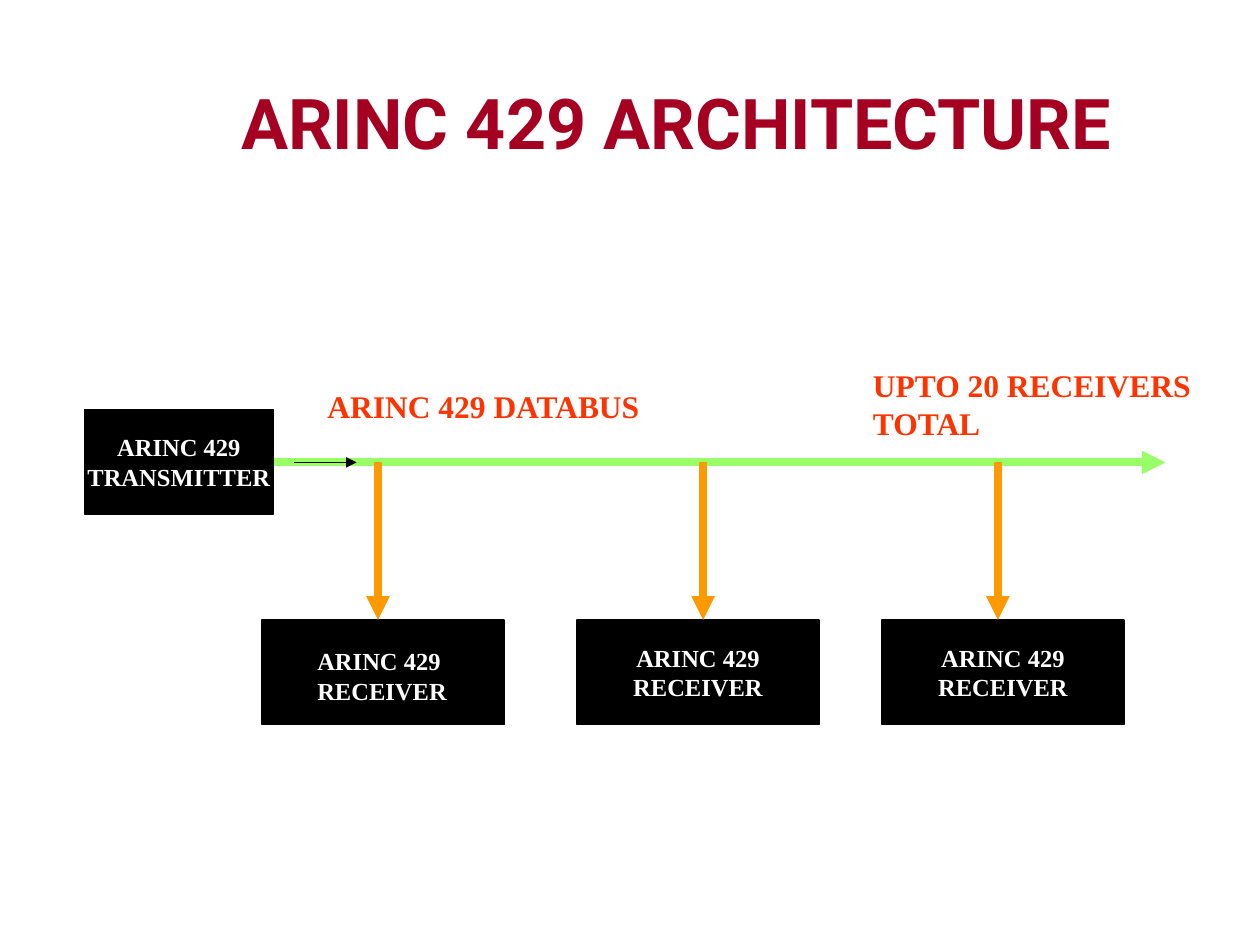
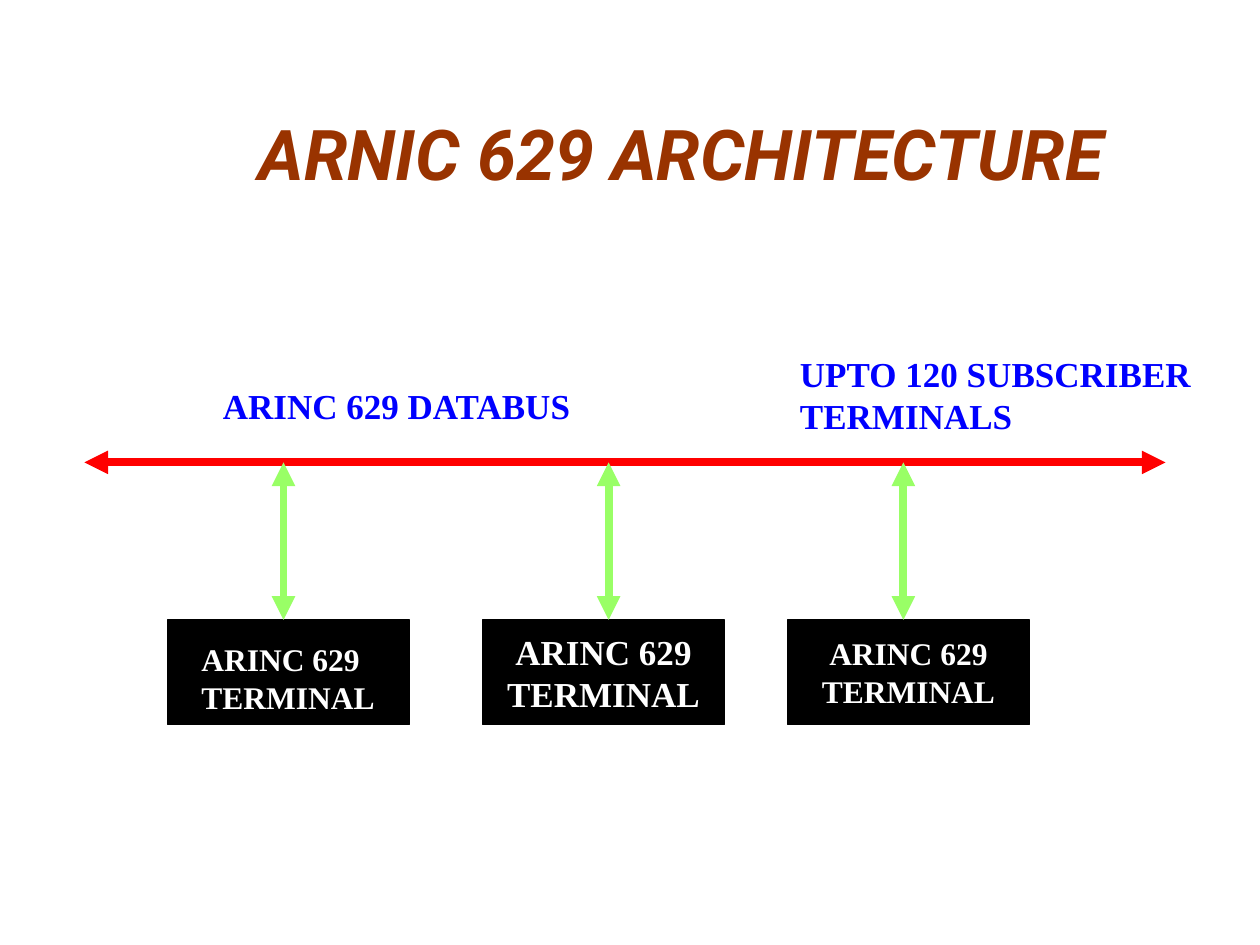
from lxml import etree
from pptx import Presentation
from pptx.dml.color import RGBColor
from pptx.enum.shapes import MSO_CONNECTOR, MSO_SHAPE
from pptx.enum.text import MSO_ANCHOR, PP_ALIGN
from pptx.oxml.ns import qn
from pptx.util import Inches, Pt

RECT = MSO_SHAPE.RECTANGLE
STRAIGHT = MSO_CONNECTOR.STRAIGHT
LEFT, CENTER = PP_ALIGN.LEFT, PP_ALIGN.CENTER
TOP, MIDDLE = MSO_ANCHOR.TOP, MSO_ANCHOR.MIDDLE

BLACK = RGBColor(0x00, 0x00, 0x00)
WHITE = RGBColor(0xFF, 0xFF, 0xFF)
CRIMSON = RGBColor(0xA5, 0x00, 0x21)
BROWN = RGBColor(0x99, 0x33, 0x00)
GREEN = RGBColor(0x99, 0xFF, 0x66)
ORANGE = RGBColor(0xFF, 0x99, 0x00)
RED = RGBColor(0xFF, 0x00, 0x00)
VERMILION = RGBColor(0xFF, 0x33, 0x00)
BLUE = RGBColor(0x00, 0x00, 0xFF)

TITLE_FONT, BODY_FONT = "Roboto", "Times New Roman"
BUS_Y, BUS_END = 3.67, 9.25
UNIT_TOP, UNIT_WIDTH, UNIT_HEIGHT = 4.92, 1.92, 0.83
UNIT_OFFSETS = (0, 2.5, 4.92)
DROP_OFFSETS = (0.92, 3.5, 5.84)
BUS_WEIGHT, THIN = 4.5, 0.75


def write(frame, text, size, color, font=BODY_FONT, italic=False,
          align=LEFT, anchor=TOP):
    """Fill a text frame with bold text, one paragraph for each line."""
    frame.word_wrap = False
    frame.vertical_anchor = anchor
    frame.text = text
    for paragraph in frame.paragraphs:
        paragraph.alignment = align
        paragraph.font.name = font
        paragraph.font.size = Pt(size)
        paragraph.font.bold = True
        paragraph.font.italic = italic
        paragraph.font.color.rgb = color


def add_label(slide, text, left, top, width, height, **style):
    box = slide.shapes.add_textbox(Inches(left), Inches(top),
                                   Inches(width), Inches(height))
    write(box.text_frame, text, **style)


def add_title(slide, text, left, top, color, italic=False):
    add_label(slide, text, left, top, 8.15, 0.59, size=40, color=color,
              font=TITLE_FONT, italic=italic, align=CENTER)


def add_unit(slide, left, top=UNIT_TOP, width=UNIT_WIDTH, text="", size=14):
    """Draw a black equipment box with centred white text."""
    unit = slide.shapes.add_shape(RECT, Inches(left), Inches(top),
                                  Inches(width), Inches(UNIT_HEIGHT))
    unit.shadow.inherit = False
    unit.fill.solid()
    unit.fill.fore_color.rgb = BLACK
    unit.line.color.rgb = BLACK
    unit.line.width = Pt(THIN)
    if text:
        write(unit.text_frame, text, size, WHITE, align=CENTER, anchor=MIDDLE)


def add_arrow(slide, start, end, color, weight=BUS_WEIGHT, both_ways=False):
    arrow = slide.shapes.add_connector(STRAIGHT, *map(Inches, start + end))
    arrow.line.color.rgb = color
    arrow.line.width = Pt(weight)
    outline = arrow.line._get_or_add_ln()
    for tip in ("a:headEnd", "a:tailEnd") if both_ways else ("a:tailEnd",):
        etree.SubElement(outline, qn(tip), type="triangle")
    etree.SubElement(arrow._element.spPr, qn("a:effectLst"))


def add_units(slide, first_left, text, sizes):
    """Draw the row of units; the first takes its text from its own label."""
    for offset, size in zip(UNIT_OFFSETS, sizes):
        add_unit(slide, first_left + offset, text=text if size else "",
                 size=size)


def add_drops(slide, first_left, color, both_ways=False):
    """Draw the arrows from the bus down to the row of units."""
    for offset in DROP_OFFSETS:
        x = first_left + offset
        add_arrow(slide, (x, BUS_Y), (x, UNIT_TOP), color,
                  both_ways=both_ways)


def build_arinc_429(slide):
    first_left = 2.08
    receiver = "ARINC 429\nRECEIVER"
    note = {"size": 18, "color": VERMILION}
    add_title(slide, "ARINC 429 ARCHITECTURE", 1.29, 0.58, CRIMSON)
    add_arrow(slide, (2.08, BUS_Y), (BUS_END, BUS_Y), GREEN)
    add_units(slide, first_left, receiver, (None, 14, 14))
    add_label(slide, receiver, 2.42, 5.08, 1.23, 0.57, size=14, color=WHITE)
    add_drops(slide, first_left, ORANGE)
    add_unit(slide, 0.67, 3.25, 1.5, "ARINC 429\nTRANSMITTER")
    add_arrow(slide, (2.33, BUS_Y), (2.83, BUS_Y), BLACK, THIN)
    add_label(slide, "ARINC 429 DATABUS", 2.5, 3.02, 2.72, 0.4, **note)
    add_label(slide, "UPTO 20 RECEIVERS\nTOTAL", 6.83, 2.86, 2.73, 0.7, **note)


def build_arinc_629(slide):
    first_left = 1.33
    terminal = "ARINC 629\nTERMINAL"
    note = {"size": 20, "color": BLUE}
    add_title(slide, "ARNIC 629 ARCHITECTURE", 1.33, 0.83, BROWN, italic=True)
    add_arrow(slide, (0.67, BUS_Y), (BUS_END, BUS_Y), RED, both_ways=True)
    add_units(slide, first_left, terminal, (None, 20, 18))
    add_label(slide, terminal, 1.5, 5.03, 1.58, 0.7, size=18, color=WHITE)
    add_drops(slide, first_left, GREEN, both_ways=True)
    add_label(slide, "ARINC 629 DATABUS", 1.67, 3, 3, 0.43, **note)
    add_label(slide, "UPTO 120 SUBSCRIBER\nTERMINALS", 6.25, 2.75, 3.31, 0.77,
              **note)


def main():
    deck = Presentation()
    deck.slide_width, deck.slide_height = Inches(10), Inches(7.5)
    blank = deck.slide_layouts[6]
    for build in (build_arinc_429, build_arinc_629):
        build(deck.slides.add_slide(blank))
    deck.save("out.pptx")


if __name__ == "__main__":
    main()
